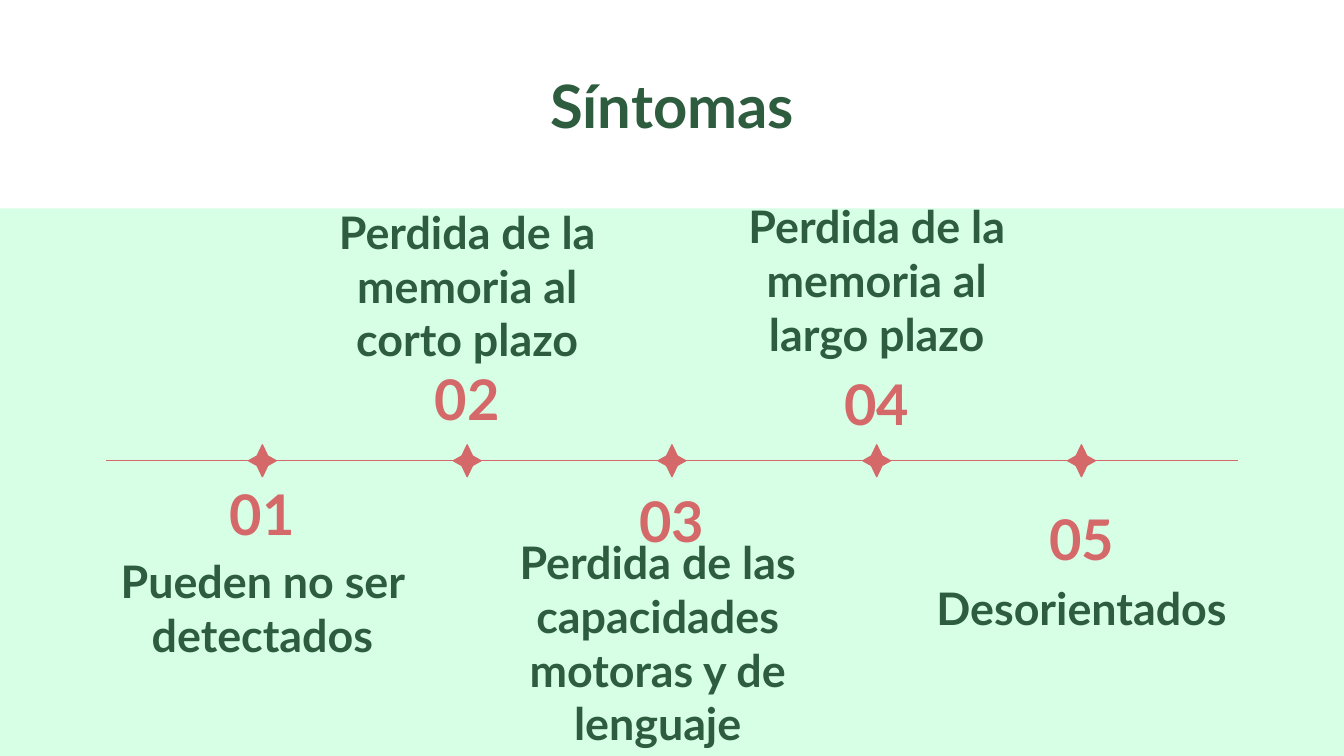
from dataclasses import dataclass

from lxml.etree import SubElement
from pptx import Presentation
from pptx.dml.color import RGBColor
from pptx.enum.shapes import MSO_CONNECTOR, MSO_SHAPE
from pptx.enum.text import MSO_ANCHOR, MSO_AUTO_SIZE, PP_ALIGN
from pptx.oxml.ns import qn
from pptx.slide import Slide
from pptx.text.text import TextFrame
from pptx.util import Cm, Pt

GREEN = "2D5C3F"
CORAL = "D56969"
MINT = "D6FFE6"
WHITE = "FFFFFF"

SLIDE_WIDTH = 25.4
SLIDE_HEIGHT = 14.29
AXIS_Y = 8.71
AXIS_MARGIN = 2.01
STEP = 3.87
NUMBER_SIZE = (2.97, 1.07)
CAPTION_HEIGHT = 1.02

# Star outline around its centre, clockwise from the top
STAR = [(0, -0.3), (0.1, -0.09), (0.26, 0), (0.1, 0.09),
        (0, 0.3), (-0.1, 0.09), (-0.26, 0), (-0.1, -0.09)]


@dataclass
class Symptom:
    """One stop on the timeline; lengths in centimetres."""
    caption: str
    number_top: float
    caption_top: float
    caption_width: float = 6.15
    caption_shift: float = 0


SYMPTOMS = [
    Symptom("Pueden no ser detectados", 9.17, 10.97),
    Symptom("Perdida de la memoria al corto plazo", 6.99, 4.88),
    Symptom("Perdida de las capacidades motoras y de lenguaje", 9.3, 11.63,
            caption_width=6.68, caption_shift=-0.27),
    Symptom("Perdida de la memoria al largo plazo", 7.09, 4.78),
    Symptom("Desorientados", 9.63, 10.97),
]


def rgb(color: str) -> RGBColor:
    return RGBColor.from_string(color)


def write(frame: TextFrame, text: str, size: int, color: str) -> None:
    """Fill a frame with one bold line of text, centred both ways."""
    frame.word_wrap = True
    frame.auto_size = MSO_AUTO_SIZE.NONE
    frame.vertical_anchor = MSO_ANCHOR.MIDDLE
    frame.margin_left = frame.margin_right = Cm(0.25)
    frame.margin_top = frame.margin_bottom = Cm(0.25)
    frame.text = text
    paragraph = frame.paragraphs[0]
    paragraph.alignment = PP_ALIGN.CENTER
    font = paragraph.font
    font.name = "Lato"
    font.size = Pt(size)
    font.bold = True
    font.color.rgb = rgb(color)


def add_label(slide: Slide, center: float, top: float, width: float,
              height: float, text: str, size: int, color: str) -> None:
    label = slide.shapes.add_textbox(
        Cm(center - width / 2), Cm(top), Cm(width), Cm(height))
    write(label.text_frame, text, size, color)


def add_header(slide: Slide) -> None:
    band = slide.shapes.add_shape(
        MSO_SHAPE.RECTANGLE, 0, 0, Cm(SLIDE_WIDTH), Cm(3.94))
    band.shadow.inherit = False
    band.fill.solid()
    band.fill.fore_color.rgb = rgb(WHITE)
    band.line.fill.background()

    title = slide.shapes.title
    title.left, title.top = Cm(6.38), Cm(1.17)
    title.width, title.height = Cm(12.65), Cm(1.6)
    write(title.text_frame, "Síntomas", 32, GREEN)
    # The band goes behind the title
    title._element.addprevious(band._element)


def add_axis(slide: Slide) -> None:
    axis = slide.shapes.add_connector(
        MSO_CONNECTOR.STRAIGHT, Cm(AXIS_MARGIN), Cm(AXIS_Y),
        Cm(SLIDE_WIDTH - AXIS_MARGIN), Cm(AXIS_Y))
    axis.line.color.rgb = rgb(CORAL)
    axis.line.width = Pt(0.75)
    SubElement(axis._element.spPr, qn("a:effectLst"))


def add_star(slide: Slide, center: float) -> None:
    points = [(Cm(center + dx), Cm(AXIS_Y + dy)) for dx, dy in STAR]
    builder = slide.shapes.build_freeform(*points[0])
    builder.add_line_segments(points[1:], close=True)
    star = builder.convert_to_shape()
    star.shadow.inherit = False
    star.fill.solid()
    star.fill.fore_color.rgb = rgb(CORAL)
    star.line.color.rgb = rgb(CORAL)
    star.line.width = Pt(0.75)


def main() -> None:
    presentation = Presentation()
    presentation.slide_width = Cm(SLIDE_WIDTH)
    presentation.slide_height = Cm(SLIDE_HEIGHT)
    slide = presentation.slides.add_slide(presentation.slide_layouts[5])
    slide.background.fill.solid()
    slide.background.fill.fore_color.rgb = rgb(MINT)

    add_header(slide)
    add_axis(slide)
    for index, symptom in enumerate(SYMPTOMS):
        center = SLIDE_WIDTH / 2 + STEP * (index - len(SYMPTOMS) // 2)
        add_label(slide, center, symptom.number_top, *NUMBER_SIZE,
                  f"{index + 1:02}", 30, CORAL)
        add_label(slide, center + symptom.caption_shift, symptom.caption_top,
                  symptom.caption_width, CAPTION_HEIGHT,
                  symptom.caption, 24, GREEN)
        add_star(slide, center)

    presentation.save("out.pptx")


if __name__ == "__main__":
    main()
